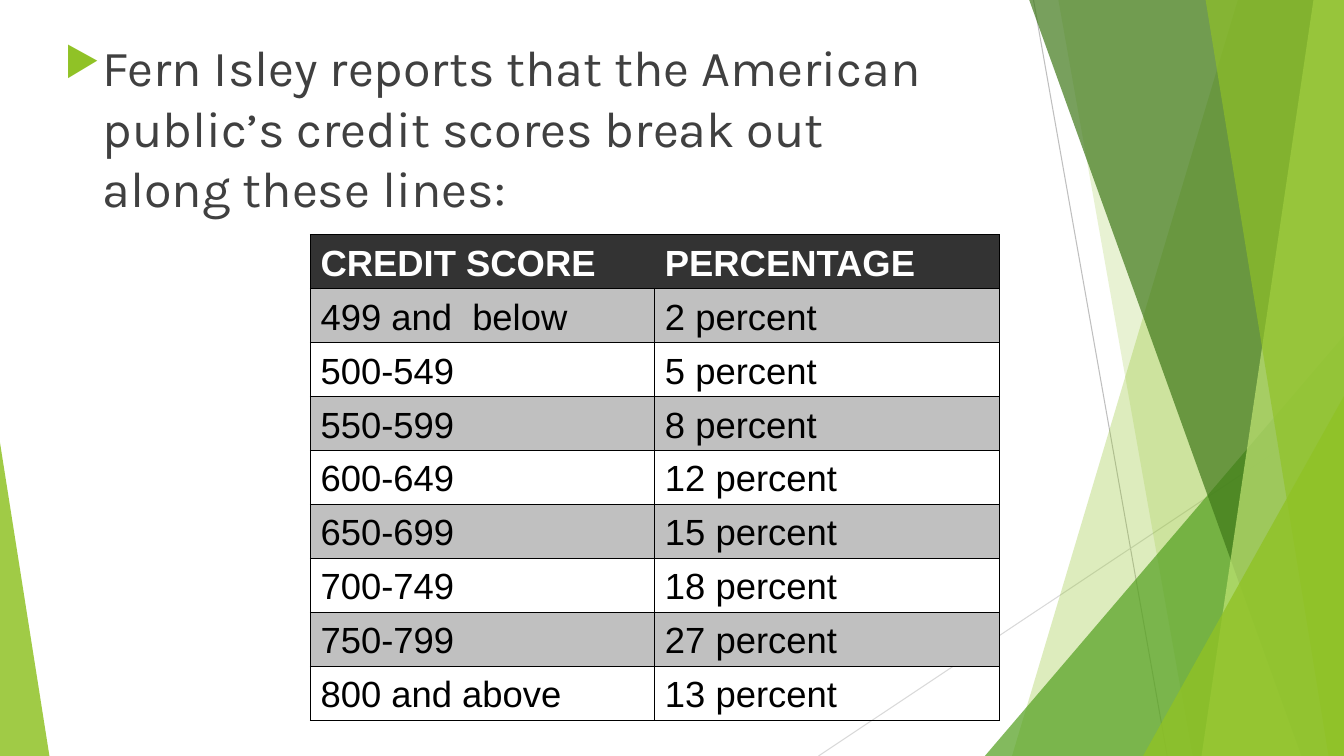
from dataclasses import dataclass

from lxml import etree
from pptx import Presentation
from pptx import util as u
from pptx.dml.color import RGBColor
from pptx.enum import shapes, text
from pptx.oxml import parse_xml
from pptx.oxml.ns import nsdecls, qn


@dataclass(frozen=True)
class Theme:
    lime: str = "90C226"
    pale_lime: str = "C0E474"
    leaf: str = "54A021"
    forest: str = "3F7819"
    ink: str = "404040"
    header: str = "333333"
    band: str = "C0C0C0"
    black: str = "000000"
    white: str = "FFFFFF"
    lead_font: str = "Karla"
    table_font: str = "Arial"
    lead_size: int = 36
    table_size: int = 26
    hairline: float = 0.75
    border: int = 1


@dataclass(frozen=True)
class Box:
    """An area of the page, divided into 100 columns and 100 rows."""
    left: int
    top: int
    width: int
    height: int

    def point(self, column, row):
        return (self.left + round(self.width * column / 100),
                self.top + round(self.height * row / 100))

    def area(self, column, row, columns, rows):
        return Box(*self.point(column, row),
                   round(self.width * columns / 100), round(self.height * rows / 100))

    def frame(self):
        return self.left, self.top, self.width, self.height


THEME = Theme()

RAYS = [  # start column, start row, end column, end row, colour
    (76.9, 0, 86.85, 100, "BFBFBF"),
    (100, 53.73, 60.9, 100, "D9D9D9"),
]
BACK_SHARDS = [  # top column, bottom column, colour, opacity
    (92.1, 75.3, THEME.lime, 30),
    (78.75, 88.73, THEME.lime, 20),
]
FRONT_SHARDS = [
    (76.58, 96.83, THEME.forest, 70),
    (97.73, 89.4, THEME.pale_lime, 70),
    (89.7, 98.85, THEME.lime, 65),
]
LEAD = ("Fern Isley reports that the American public’s "
        "credit scores break out along these lines:")
SCORES = [
    ("CREDIT SCORE", "PERCENTAGE"),
    ("499 and  below", "2 percent"),
    ("500-549", "5 percent"),
    ("550-599", "8 percent"),
    ("600-649", "12 percent"),
    ("650-699", "15 percent"),
    ("700-749", "18 percent"),
    ("750-799", "27 percent"),
    ("800 and above", "13 percent"),
]


def add_span(para, words, font, size, colour, bold=False):
    span = para.add_run()
    span.text = words
    span.font.name = font
    span.font.size = u.Pt(size)
    span.font.bold = bold
    span.font.color.rgb = RGBColor.from_string(colour)


def paint(shape, colour, opacity):
    shape.shadow.inherit = False
    shape.line.fill.background()
    shape.fill.solid()
    shape.fill.fore_color.rgb = RGBColor.from_string(colour)
    tint = shape._element.spPr.find(f"{qn('a:solidFill')}/{qn('a:srgbClr')}")
    etree.SubElement(tint, qn("a:alpha")).set("val", str(opacity * 1000))


def add_ray(page, box, start_column, start_row, end_column, end_row, colour):
    ray = page.shapes.add_connector(shapes.MSO_CONNECTOR.STRAIGHT,
                                    *box.point(start_column, start_row),
                                    *box.point(end_column, end_row))
    ray.line.color.rgb = RGBColor.from_string(colour)
    ray.line.width = u.Pt(THEME.hairline)
    etree.SubElement(ray._element.spPr, qn("a:effectLst"))


def add_shard(page, box, top_column, bottom_column, colour, opacity):
    """Fill from a slanted left edge to the right side of the box."""
    outline = page.shapes.build_freeform(*box.point(top_column, 0))
    corners = [(100, 0), (100, 100), (bottom_column, 100)]
    outline.add_line_segments([box.point(*corner) for corner in corners], close=True)
    paint(outline.convert_to_shape(), colour, opacity)


def add_corner(page, box, peak, colour, opacity):
    """Add a triangle whose peak is at the given share of its width."""
    corner = page.shapes.add_shape(shapes.MSO_SHAPE.ISOSCELES_TRIANGLE, *box.frame())
    corner.adjustments[0] = peak
    paint(corner, colour, opacity)


def add_backdrop(page, box):
    for ray in RAYS:
        add_ray(page, box, *ray)
    for shard in BACK_SHARDS:
        add_shard(page, box, *shard)
    add_corner(page, box.area(73.28, 44.4, 26.72, 55.6), 1, THEME.leaf, 72)
    for shard in FRONT_SHARDS:
        add_shard(page, box, *shard)
    add_corner(page, box.area(85.05, 52.4, 14.95, 47.6), 1, THEME.lime, 80)
    add_corner(page, box.area(0, 58.53, 3.68, 41.47), 0, THEME.lime, 85)


def set_borders(cell, open_side=None):
    """Draw every side of a cell except the open one."""
    properties = cell._tc.get_or_add_tcPr()
    for place, side in enumerate("LRTB"):
        fill = ("<a:noFill/>" if side == open_side else
                f'<a:solidFill><a:srgbClr val="{THEME.black}"/></a:solidFill>')
        properties.insert(place, parse_xml(
            f'<a:ln{side} {nsdecls("a")} w="{u.Pt(THEME.border)}">{fill}</a:ln{side}>'))


def add_score_table(page, box):
    table = page.shapes.add_table(len(SCORES), len(SCORES[0]), *box.frame()).table
    table.horz_banding = False
    for row, entries in enumerate(SCORES):
        is_header = row == 0
        for column, words in enumerate(entries):
            cell = table.cell(row, column)
            cell.vertical_anchor = text.MSO_ANCHOR.BOTTOM
            if row % 2 or is_header:
                cell.fill.solid()
                cell.fill.fore_color.rgb = RGBColor.from_string(
                    THEME.header if is_header else THEME.band)
            else:
                cell.fill.background()
            set_borders(cell, "RL"[column] if is_header else None)
            add_span(cell.text_frame.paragraphs[0], words, THEME.table_font,
                     THEME.table_size, THEME.white if is_header else THEME.black,
                     is_header)


def add_lead(page, box):
    frame = page.shapes.add_textbox(*box.frame()).text_frame
    frame.word_wrap = True
    para = frame.paragraphs[0]
    para.space_before = u.Pt(10)
    properties = para._p.get_or_add_pPr()
    indent = u.Inches(0.38)
    properties.set("marL", str(indent))
    properties.set("indent", str(-indent))
    for mark in (f'<a:buClr {nsdecls("a")}><a:srgbClr val="{THEME.lime}"/></a:buClr>',
                 f'<a:buSzPct {nsdecls("a")} val="80000"/>',
                 f'<a:buChar {nsdecls("a")} char="▶"/>'):
        properties.append(parse_xml(mark))
    add_span(para, LEAD, THEME.lead_font, THEME.lead_size, THEME.ink)


def main():
    deck = Presentation()
    deck.slide_width, deck.slide_height = u.Inches(13.33), u.Inches(7.5)
    page = deck.slides.add_slide(deck.slide_layouts[6])
    canvas = Box(0, 0, deck.slide_width, deck.slide_height)
    add_backdrop(page, canvas)
    add_score_table(page, canvas.area(23.1, 31.07, 51.25, 64.27))
    add_lead(page, canvas.area(4.05, 4.13, 67.5, 66))
    deck.save("out.pptx")


if __name__ == "__main__":
    main()
